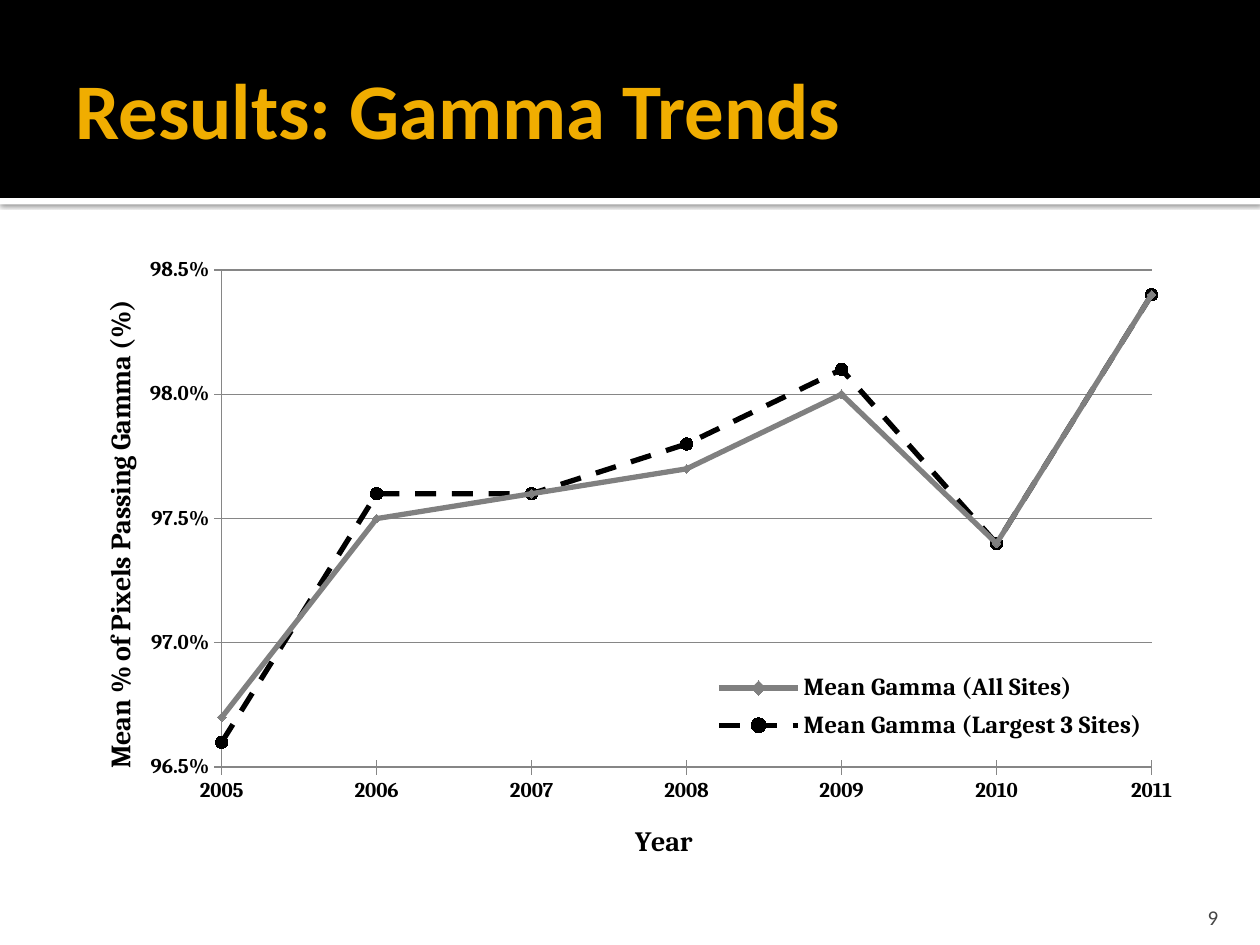
"""Build the gamma trends slide with its scatter chart."""
from lxml import etree
from pptx import Presentation
from pptx.chart.data import XyChartData
from pptx.dml.color import RGBColor
from pptx.enum.chart import XL_CHART_TYPE, XL_LEGEND_POSITION, XL_MARKER_STYLE, XL_TICK_MARK
from pptx.enum.dml import MSO_LINE
from pptx.enum.shapes import MSO_SHAPE
from pptx.enum.text import MSO_ANCHOR, PP_ALIGN
from pptx.oxml import parse_xml
from pptx.oxml.ns import qn
from pptx.util import Cm, Pt

SCATTER = XL_CHART_TYPE.XY_SCATTER_LINES
RIGHT_LEGEND = XL_LEGEND_POSITION.RIGHT
DIAMOND, CIRCLE = XL_MARKER_STYLE.DIAMOND, XL_MARKER_STYLE.CIRCLE
CROSS = XL_TICK_MARK.CROSS
NO_TICK = XL_TICK_MARK.NONE
SOLID, DASH = MSO_LINE.SOLID, MSO_LINE.DASH
RECTANGLE = MSO_SHAPE.RECTANGLE
MIDDLE, BOTTOM = MSO_ANCHOR.MIDDLE, MSO_ANCHOR.BOTTOM
LEFT, RIGHT = PP_ALIGN.LEFT, PP_ALIGN.RIGHT
DRAWING = "http://schemas.openxmlformats.org/drawingml/2006/main"
CHART = "http://schemas.openxmlformats.org/drawingml/2006/chart"


def color(value):
    """Turn a hex string into a colour."""
    return RGBColor.from_string(value)


def place(parent, index, **settings):
    """Give a chart part a manual layout."""
    for old in parent.findall(qn("c:layout")):
        parent.remove(old)
    parts = "".join(f'<c:{name} val="{value}"/>' for name, value in settings.items())
    parent.insert(index, parse_xml(
        f'<c:layout xmlns:c="{CHART}"><c:manualLayout>{parts}</c:manualLayout></c:layout>'))


deck = Presentation()
deck.slide_width, deck.slide_height = Cm(25.4), Cm(19.05)
page = deck.slides.add_slide(deck.slide_layouts[6])

for top, height, fill in [(3.99, 0.13, "FFFFFF"), (0, 3.99, "000000")]:
    band = page.shapes.add_shape(RECTANGLE, 0, Cm(top), deck.slide_width, Cm(height))
    band.shadow.inherit = False
    band.fill.solid()
    band.fill.fore_color.rgb = color(fill)
    band.line.fill.background()
    if fill == "FFFFFF":
        effects = band._element.spPr.find(qn("a:effectLst"))
        effects.append(etree.fromstring(
            f'<a:outerShdw xmlns:a="{DRAWING}" blurRad="31750" dist="10160" dir="5400000">'
            '<a:srgbClr val="000000"><a:alpha val="60000"/></a:srgbClr></a:outerShdw>'))

labels = [
    ("Results: Gamma Trends", (1.27, 0.43, 22.86, 3.48), (0.25, 0.13, 0.13, 0.13),
     MIDDLE, LEFT, 45, True, "F0AD00"),
    ("9", (22.78, 17.98, 2.03, 0.76), (0.25, 0.13, 0.25, 0),
     BOTTOM, RIGHT, 12, False, "454545"),
]
for text, area, insets, anchor, align, size, bold, ink in labels:
    box = page.shapes.add_textbox(*map(Cm, area))
    frame = box.text_frame
    frame.word_wrap = True
    frame.vertical_anchor = anchor
    frame.margin_left, frame.margin_top, frame.margin_right, frame.margin_bottom = map(Cm, insets)
    para = frame.paragraphs[0]
    para.text = text
    para.alignment = align
    para.font.name, para.font.size, para.font.bold = "Calibri", Pt(size), bold
    para.font.color.rgb = color(ink)

trends = [
    ("Mean Gamma (All Sites)", [0.967, 0.975, 0.976, 0.977, 0.98, 0.974, 0.984],
     "808080", SOLID, DIAMOND, 5),
    ("Mean Gamma (Largest 3 Sites)", [0.966, 0.976, 0.976, 0.978, 0.981, 0.974, 0.984],
     "000000", DASH, CIRCLE, 7),
]
data = XyChartData()
for name, values, *_ in trends:
    series = data.add_series(name)
    for year, value in enumerate(values, start=2005):
        series.add_data_point(year, value)

chart = page.shapes.add_chart(SCATTER, Cm(1.27), Cm(4.93), Cm(22.86), Cm(12.85), data).chart
chart.has_title = False
chart.font.name, chart.font.size = "Calibri", Pt(10)
chart.font.color.rgb = color("000000")
plot = chart.plots[0]
plot.vary_by_categories = False

for series, (_, _, ink, dash, style, size) in zip(plot.series, trends):
    line, marker = series.format.line, series.marker
    line.color.rgb = color(ink)
    line.width = Pt(3)
    line.dash_style = dash
    marker.style, marker.size = style, size
    marker.format.fill.solid()
    marker.format.fill.fore_color.rgb = color(ink)
    marker.format.line.color.rgb = color(ink)

axes = [
    (chart.category_axis, "Year", 2005, 2011, 1, "General", False, (0.5, 0.9)),
    (chart.value_axis, "Mean % of Pixels Passing Gamma (%)", 0.965, 0.985, 0.005,
     "0.0%", True, (0.03, 0.08)),
]
for axis, title, low, high, step, number_format, grid, (x, y) in axes:
    axis.minimum_scale, axis.maximum_scale, axis.major_unit = low, high, step
    axis.major_tick_mark, axis.minor_tick_mark = CROSS, NO_TICK
    axis.has_major_gridlines = grid
    axis.tick_labels.number_format = number_format
    axis.tick_labels.number_format_is_linked = False
    lines = [axis.format.line]
    if grid:
        lines.append(axis.major_gridlines.format.line)
    for line in lines:
        line.color.rgb = color("868686")
        line.width = Pt(0.75)
    para = axis.axis_title.text_frame.paragraphs[0]
    para.text = title
    for font, size in [(axis.tick_labels.font, 12), (para.font, 16)]:
        font.name, font.size, font.bold = "Cambria", Pt(size), True
        font.color.rgb = color("000000")
    place(axis.axis_title._element, 1, xMode="edge", yMode="edge", x=x, y=y)

chart.has_legend = True
legend = chart.legend
legend.position = RIGHT_LEGEND
legend.include_in_layout = True
legend.font.name, legend.font.size, legend.font.bold = "Cambria", Pt(14), True
legend.font.color.rgb = color("000000")
place(legend._element, 1, xMode="edge", yMode="edge", x=0.57, y=0.66, w=0.39, h=0.13)
place(chart._chartSpace.chart.plotArea, 0, layoutTarget="inner",
      xMode="edge", yMode="edge", x=0.14, y=0.04, w=0.82, h=0.78)

deck.save("out.pptx")
